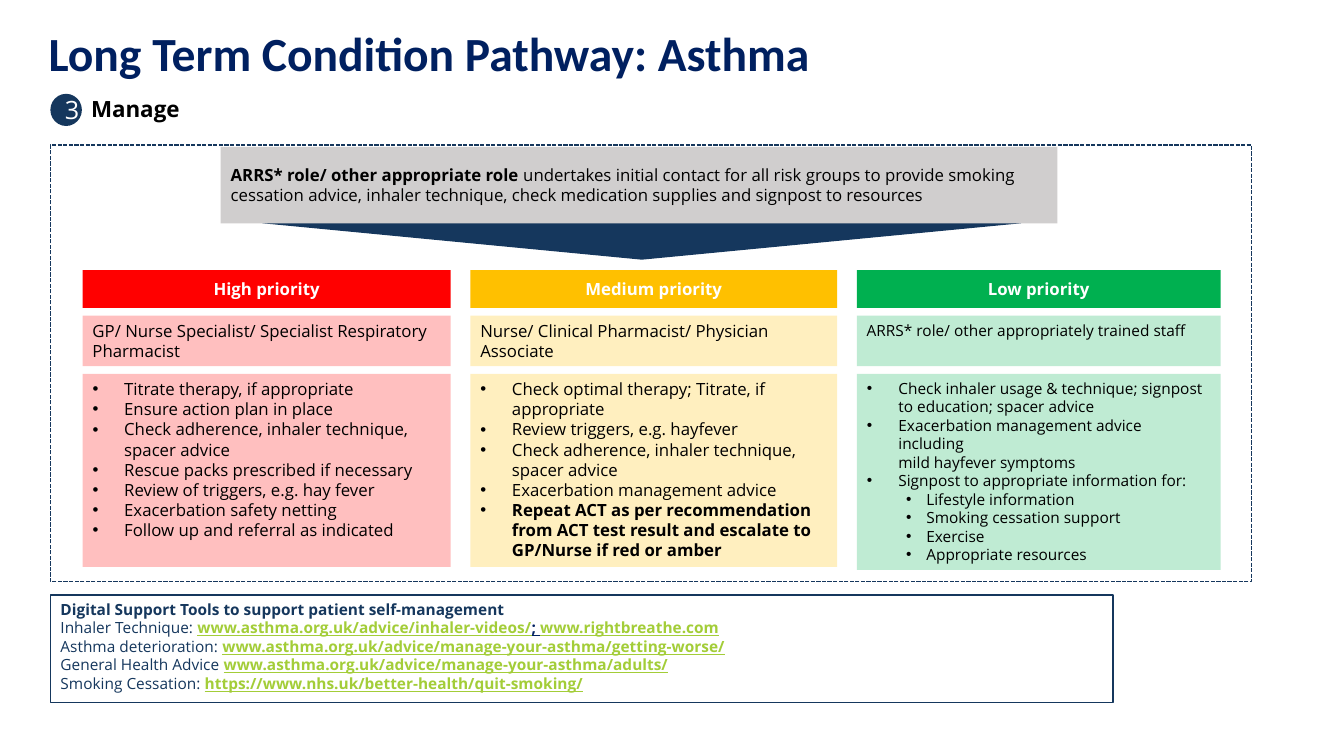
from dataclasses import dataclass

from lxml import etree
from pptx import Presentation
from pptx.dml.color import RGBColor
from pptx.enum.dml import MSO_LINE
from pptx.enum.shapes import MSO_SHAPE
from pptx.enum.text import MSO_ANCHOR, MSO_AUTO_SIZE, PP_ALIGN
from pptx.oxml.ns import qn
from pptx.util import Pt

RECTANGLE, OVAL, MERGE = MSO_SHAPE.RECTANGLE, MSO_SHAPE.OVAL, MSO_SHAPE.FLOWCHART_MERGE
TOP, MIDDLE = MSO_ANCHOR.TOP, MSO_ANCHOR.MIDDLE
LEFT, CENTER = PP_ALIGN.LEFT, PP_ALIGN.CENTER
NO_FIT, SHORT_DASH = MSO_AUTO_SIZE.NONE, MSO_LINE.SQUARE_DOT
COMPARISON_LAYOUT = 3 + 1


@dataclass(frozen=True)
class Theme:
    """Colours, fonts and type sizes of the slide."""
    navy: str = "15375D"
    title_blue: str = "002060"
    link: str = "A3CD38"
    grey: str = "D0CECE"
    red: str = "FF0000"
    amber: str = "FFC000"
    green: str = "00B050"
    black: str = "000000"
    white: str = "FFFFFF"
    title_font: str = "Calibri"
    body_font: str = "Open Sans"
    title_size: int = 34
    badge_size: int = 18
    section_size: int = 16
    body_size: int = 12
    small_size: int = 11


THEME = Theme()

INDENTS = {"plain": (0, 0), "bullet": (22.5, -22.5), "hanging": (22.5, 0), "sub": (42.5, -14.4)}

COLUMNS = [
    ("High priority", THEME.red, 263, 138, THEME.body_size,
     "GP/ Nurse Specialist/ Specialist Respiratory Pharmacist",
     [("bullet", "Titrate therapy, if appropriate"),
      ("bullet", "Ensure action plan in place"),
      ("bullet", "Check adherence, inhaler technique, spacer advice"),
      ("bullet", "Rescue packs prescribed if necessary"),
      ("bullet", "Review of triggers, e.g. hay fever"),
      ("bullet", "Exacerbation safety netting"),
      ("bullet", "Follow up and referral as indicated")]),
    ("Medium priority", THEME.amber, 262, 138, THEME.body_size,
     "Nurse/ Clinical Pharmacist/ Physician Associate",
     [("bullet", "Check optimal therapy; Titrate, if appropriate"),
      ("bullet", "Review triggers, e.g. hayfever"),
      ("bullet", "Check adherence, inhaler technique, spacer advice"),
      ("bullet", "Exacerbation management advice"),
      ("bullet", ("Repeat ACT as per recommendation from ACT test result and "
                  "escalate to GP/Nurse if red or amber"), {"bold": True})]),
    ("Low priority", THEME.green, 260, 140, THEME.small_size,
     "ARRS* role/ other appropriately trained staff",
     [("bullet", "Check inhaler usage & technique; signpost to education; spacer advice"),
      ("bullet", "Exacerbation management advice including "),
      ("hanging", "mild hayfever symptoms"),
      ("bullet", "Signpost to appropriate information for:"),
      ("sub", "Lifestyle information"),
      ("sub", "Smoking cessation support"),
      ("sub", "Exercise"),
      ("sub", "Appropriate resources")]),
]

SUPPORT_LINKS = [
    ("Inhaler Technique: ", ["www.asthma.org.uk/advice/inhaler-videos/", "www.rightbreathe.com"]),
    ("Asthma deterioration: ", ["www.asthma.org.uk/advice/manage-your-asthma/getting-worse/"]),
    ("General Health Advice ", ["www.asthma.org.uk/advice/manage-your-asthma/adults/"]),
    ("Smoking Cessation: ", ["https://www.nhs.uk/better-health/quit-smoking/"]),
]


def paint(shape, fill=None, line=None, opacity=100):
    """Give a shape its fill and outline; None means no paint."""
    if fill:
        shape.fill.solid()
        shape.fill.fore_color.rgb = RGBColor.from_string(fill)
        if opacity < 100:
            color = shape.fill._xPr.find(qn("a:solidFill"))[0]
            etree.SubElement(color, qn("a:alpha"), val=str(opacity * 1000))
    else:
        shape.fill.background()
    if line:
        shape.line.color.rgb = RGBColor.from_string(line)
        shape.line.width = Pt(1)
    else:
        shape.line.fill.background()


def place(shape, box):
    """Move a shape to a box of left, top, width and height in points."""
    shape.left, shape.top, shape.width, shape.height = (Pt(length) for length in box)


def draw(page, kind, box, fill=None, line=None, opacity=100):
    """Add a painted shape without shadow."""
    shape = page.shapes.add_shape(kind, *(Pt(length) for length in box))
    shape.shadow.inherit = False
    paint(shape, fill, line, opacity)
    return shape


def format_span(span, size, color=THEME.black, bold=False, underline=False, font=THEME.body_font):
    """Set the type of one run."""
    span.font.name, span.font.size = font, Pt(size)
    span.font.bold, span.font.underline = bold, underline
    span.font.color.rgb = RGBColor.from_string(color)


def indent(para, kind):
    """Set the indents and bullet of a paragraph."""
    margin, hanging = INDENTS[kind]
    para.level = 1 if kind == "sub" else 0
    properties = para._p.get_or_add_pPr()
    properties.set("marL", str(Pt(margin)))
    properties.set("indent", str(Pt(hanging)))
    if hanging:
        etree.SubElement(properties, qn("a:buFont"), typeface="Arial")
        etree.SubElement(properties, qn("a:buChar"), char="•")
    else:
        etree.SubElement(properties, qn("a:buNone"))


def write(shape, paragraphs, size, anchor=TOP, align=LEFT):
    """Fill a shape with paragraphs of an indent kind and styled spans."""
    frame = shape.text_frame
    frame.word_wrap, frame.auto_size, frame.vertical_anchor = True, NO_FIT, anchor
    for number, (kind, spans) in enumerate(paragraphs):
        para = frame.add_paragraph() if number else frame.paragraphs[0]
        indent(para, kind)
        para.alignment, para.space_before = align, Pt(0)
        for text, style in spans:
            span = para.add_run()
            span.text = text
            format_span(span, size, **style)


def add_heading(page, box):
    """Place the title, the step badge and the section name."""
    left, top, width, height = box
    title = page.shapes.title
    place(title, (left, top, width, height))
    write(title, [("plain", [("Long Term Condition Pathway: Asthma",
                              {"color": THEME.title_blue, "bold": True, "font": THEME.title_font})])],
          THEME.title_size)
    section = page.shapes.add_textbox(Pt(left + 30.5), Pt(top + 50.5), Pt(216), Pt(29))
    write(section, [("plain", [("Manage", {"bold": True})])], THEME.section_size)
    badge = draw(page, OVAL, (left + 8.5, top + 53.3, 22.5, 23), THEME.navy)
    write(badge, [("plain", [("3", {"color": THEME.white})])], THEME.badge_size, MIDDLE, CENTER)


def add_first_contact(page, box):
    """Place the grey statement and the wedge that points down from it."""
    left, top, width, height = box
    draw(page, MERGE, (left + 30, top + height - 0.5, 541.5, 26), THEME.navy, THEME.navy)
    banner = draw(page, RECTANGLE, box, THEME.grey)
    write(banner, [("plain", [
        ("ARRS* role/ other appropriate role ", {"bold": True}),
        ("undertakes initial contact for all risk groups to provide smoking cessation advice, "
         "inhaler technique, check medication supplies and signpost to resources", {})])],
        THEME.body_size, MIDDLE)


def add_column(page, body, column, left, top):
    """Place one priority column: heading, staff and list of actions."""
    name, color, width, body_height, size, staff, actions = column
    heading = draw(page, RECTANGLE, (left, top, width, 27), color)
    write(heading, [("plain", [(name, {"color": THEME.white, "bold": True})])],
          THEME.body_size, MIDDLE, CENTER)
    team = draw(page, RECTANGLE, (left, top + 32.5, width, 36), color, opacity=25)
    write(team, [("plain", [(staff, {})])], size)
    place(body, (left, top + 74, width, body_height))
    paint(body, color, opacity=25)
    write(body, [(kind, [(text, style[0] if style else {})]) for kind, text, *style in actions], size)


def add_support_tools(body, box):
    """Place the outlined list of digital support tools."""
    place(body, box)
    paint(body, line=THEME.navy)
    label_style = {"color": THEME.navy}
    link_style = {"color": THEME.link, "bold": True, "underline": True}
    paragraphs = [("plain", [("Digital Support Tools to support patient self-management",
                              {"color": THEME.navy, "bold": True})])]
    for label, links in SUPPORT_LINKS:
        spans = [(label, label_style)]
        for number, link in enumerate(links):
            if number:
                spans.append(("; ", {**link_style, "color": THEME.title_blue}))
            spans.append((link, link_style))
        paragraphs.append(("plain", spans))
    write(body, paragraphs, THEME.small_size)


def main():
    """Build the deck and save it."""
    deck = Presentation()
    deck.slide_width, deck.slide_height = Pt(960), Pt(540)
    page = deck.slides.add_slide(deck.slide_layouts[COMPARISON_LAYOUT])
    *lists, support = list(page.placeholders)[1:]
    add_heading(page, (27.5, 13.7, 858, 48))
    frame = draw(page, RECTANGLE, (36, 103.7, 858, 311.8), line=THEME.navy)
    frame.line.dash_style = SHORT_DASH
    add_first_contact(page, (157.7, 105, 597.6, 54.5))
    left = 59
    for column, body in zip(COLUMNS, lists):
        add_column(page, body, column, left, 193)
        left += column[2] + 14
    add_support_tools(support, (36, 425, 759, 77))
    deck.save("out.pptx")


if __name__ == "__main__":
    main()
